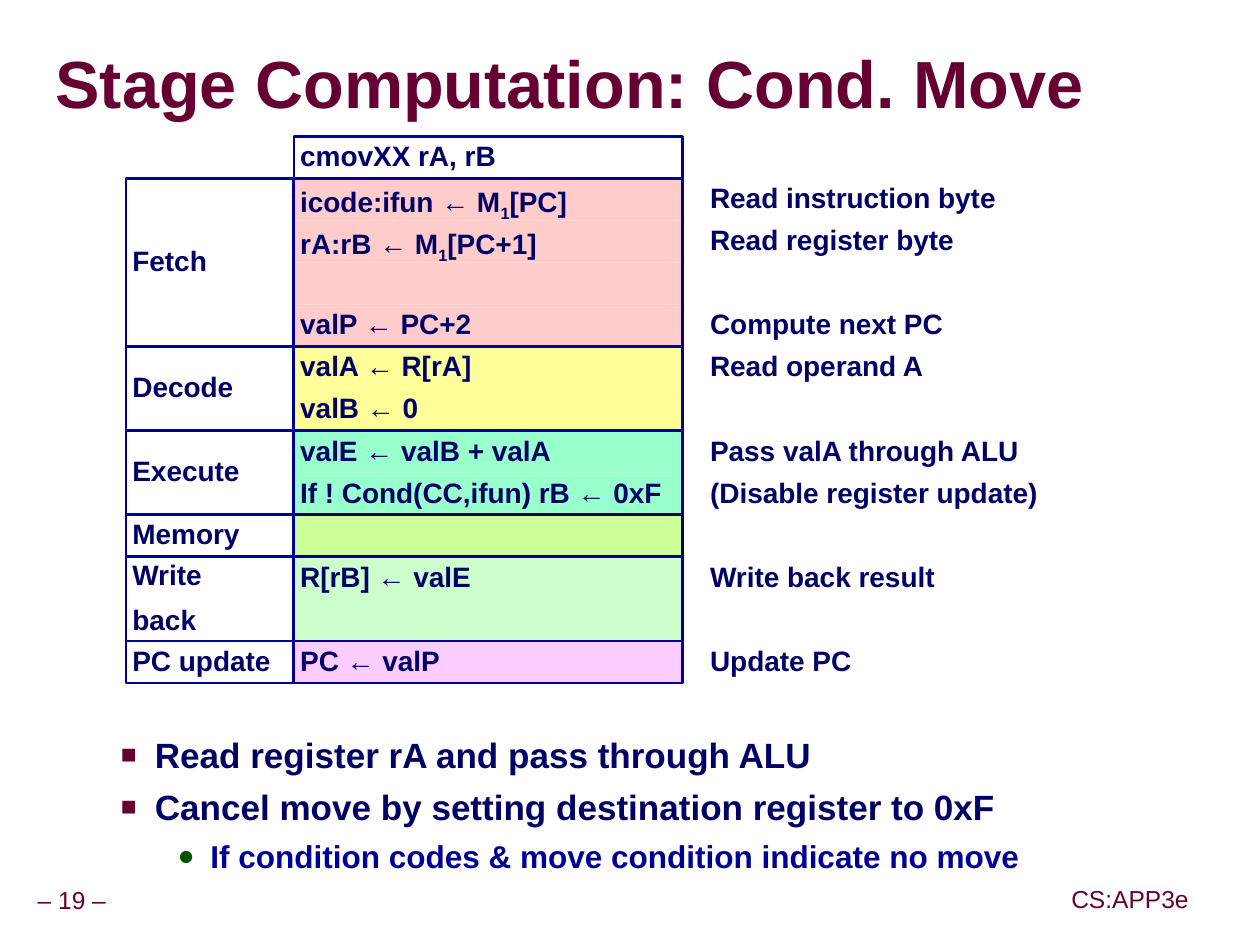
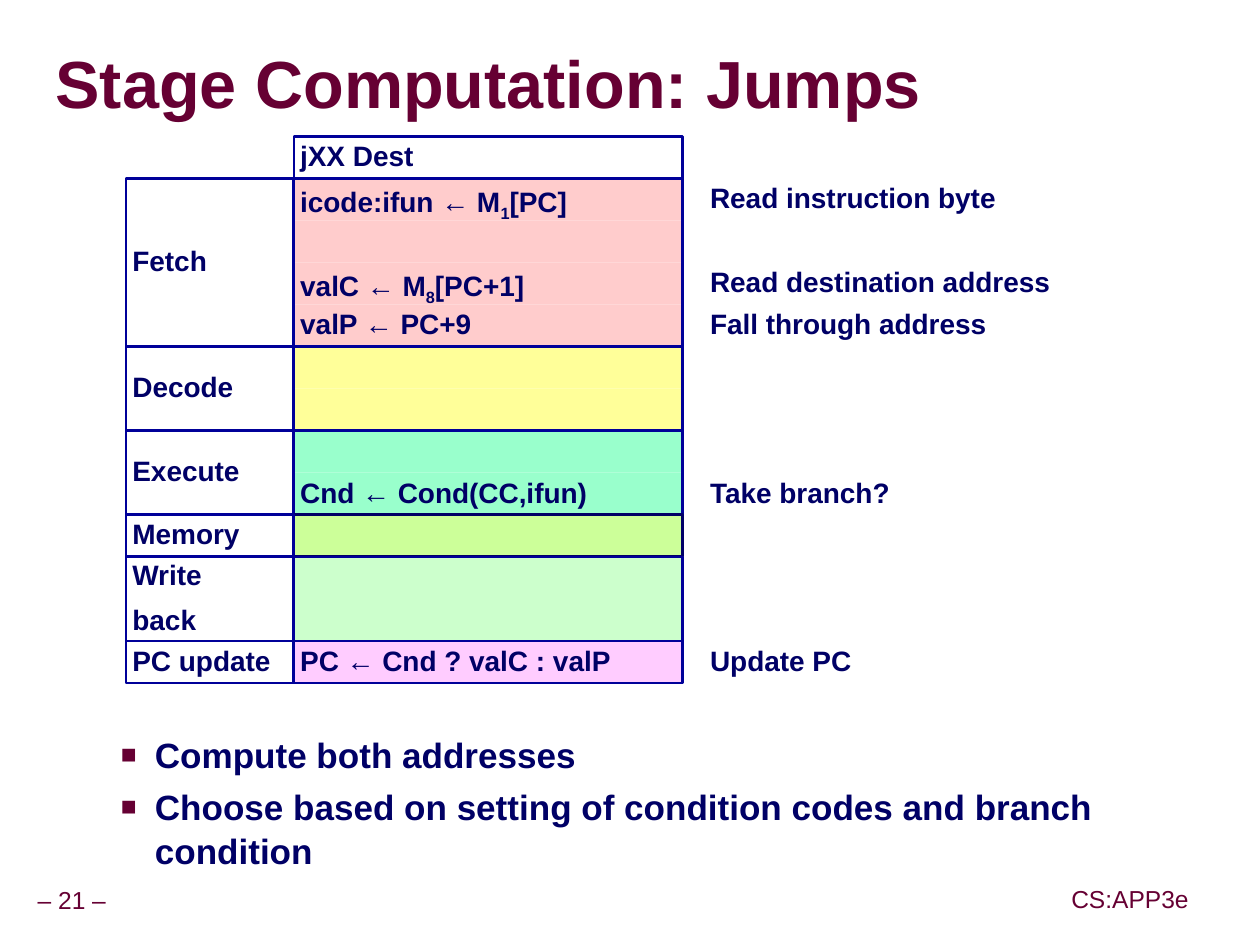
from lxml import etree
from pptx import Presentation
from pptx.dml.color import RGBColor
from pptx.enum.shapes import MSO_SHAPE
from pptx.enum.text import MSO_ANCHOR, PP_ALIGN
from pptx.oxml.ns import qn
from pptx.util import Inches, Pt

RECT = MSO_SHAPE.RECTANGLE
TOP, MIDDLE = MSO_ANCHOR.TOP, MSO_ANCHOR.MIDDLE
CENTER = PP_ALIGN.CENTER

FONT = "Arial"
COLORS = {
    "maroon": "660033", "navy": "000066", "blue": "000099", "green": "005400",
    "shadow": "999999",
    "fetch": "FFCCCC", "decode": "FFFF99", "execute": "99FFCC",
    "memory": "CCFF99", "write": "CCFFCC", "pc": "FFCCFF",
}

ROW_H = 1 / 3
LABEL_W, FORMULA_W, NOTE_GAP = 1.33, 3.08, 0.17

# label lines, fill, number of rows, outline
STAGES = [
    (["Fetch"], "fetch", 4, "blue"),
    (["Decode"], "decode", 2, "blue"),
    (["Execute"], "execute", 2, "blue"),
    (["Memory"], "memory", 1, "navy"),
    (["Write", "back"], "write", 2, "blue"),
    (["PC update"], "pc", 1, "blue"),
]

# level: left margin, hanging indent, size, text colour, bullet, bullet colour,
# bullet percent, line spacing, space before
BULLETS = {
    1: (0.81, 0.27, 20, "navy", "■", "maroon", 75, 1.04, 5),
    2: (1.25, 0.26, 18, "blue", "●", "green", 90, 1.07, 3.5),
}

# rows: (formula, explanation), where "_" lowers the next character
SLIDES = [
    {
        "number": 19,
        "title": "Stage Computation: Cond. Move",
        "instruction": "cmovXX rA, rB",
        "rows": [
            ("icode:ifun ← M_1[PC]", "Read instruction byte"),
            ("rA:rB ← M_1[PC+1]", "Read register byte"),
            ("", ""),
            ("valP ← PC+2", "Compute next PC"),
            ("valA ← R[rA]", "Read operand A"),
            ("valB ← 0", ""),
            ("valE ← valB + valA", "Pass valA through ALU"),
            ("If ! Cond(CC,ifun) rB ← 0xF", "(Disable register update)"),
            ("", ""),
            ("R[rB] ← valE", "Write back result"),
            ("", ""),
            ("PC ← valP", "Update PC"),
        ],
        "points": [
            (1, "Read register rA and pass through ALU"),
            (1, "Cancel move by setting destination register to 0xF"),
            (2, "If condition codes & move condition indicate no move"),
        ],
    },
    {
        "number": 21,
        "title": "Stage Computation: Jumps",
        "instruction": "jXX Dest",
        "rows": [
            ("icode:ifun ← M_1[PC]", "Read instruction byte"),
            ("", ""),
            ("valC ← M_8[PC+1]", "Read destination address"),
            ("valP ← PC+9", "Fall through address"),
            ("", ""),
            ("", ""),
            ("", ""),
            ("Cnd ← Cond(CC,ifun)", "Take branch?"),
            ("", ""),
            ("", ""),
            ("", ""),
            ("PC ← Cnd ? valC : valP", "Update PC"),
        ],
        "points": [
            (1, "Compute both addresses"),
            (1, "Choose based on setting of condition codes and branch condition"),
        ],
    },
]


def rgb(name):
    return RGBColor.from_string(COLORS[name])


def add_color(parent, name):
    etree.SubElement(parent, qn("a:srgbClr"), val=COLORS[name])


def style_paragraph(paragraph, size, color, bold=True, spacing=0.9):
    paragraph.line_spacing = spacing
    font = paragraph.font
    font.name, font.size, font.bold = FONT, Pt(size), bold
    font.color.rgb = rgb(color)


def prepare_frame(shape, anchor=TOP, inset_x=0.05, inset_y=0.05, wrap=True):
    frame = shape.text_frame
    frame.word_wrap, frame.vertical_anchor = wrap, anchor
    frame.margin_left = frame.margin_right = Inches(inset_x)
    frame.margin_top = frame.margin_bottom = Inches(inset_y)
    return frame


def add_text_area(shapes, box):
    return shapes.add_textbox(*map(Inches, box))


def add_cell(shapes, box, fill=None, line=None):
    cell = shapes.add_shape(RECT, *map(Inches, box))
    cell.shadow.inherit = False
    if fill:
        cell.fill.solid()
        cell.fill.fore_color.rgb = rgb(fill)
    else:
        cell.fill.background()
    if line:
        cell.line.color.rgb = rgb(line)
        cell.line.width = Pt(1.5)
    else:
        cell.line.fill.background()
    return cell


def write_cell(shape, lines, anchor=TOP):
    """Write one paragraph per line, lowering each character after "_"."""
    frame = prepare_frame(shape, anchor)
    for i, line in enumerate(lines):
        paragraph = frame.add_paragraph() if i else frame.paragraphs[0]
        paragraph.alignment = PP_ALIGN.LEFT
        if i:
            paragraph.space_before = Pt(8)
        style_paragraph(paragraph, 16, "navy")
        before, _, lowered = line.partition("_")
        paragraph.add_run().text = before
        if lowered:
            subscript = paragraph.add_run()
            subscript.text = lowered[0]
            subscript.font._element.set("baseline", "-25000")
            paragraph.add_run().text = lowered[1:]


def add_title(slide, box, text):
    frame = prepare_frame(add_text_area(slide.shapes, box), MIDDLE, 0, 0)
    paragraph = frame.paragraphs[0]
    style_paragraph(paragraph, 38, "maroon", spacing=0.87)
    run = paragraph.add_run()
    run.text = text
    effects = etree.SubElement(run.font._element, qn("a:effectLst"))
    shadow = etree.SubElement(effects, qn("a:outerShdw"),
                              dist="38100", dir="2700000", algn="tl")
    add_color(shadow, "shadow")


def add_footer(slide, box, text):
    frame = prepare_frame(add_text_area(slide.shapes, box), MIDDLE, wrap=False)
    paragraph = frame.paragraphs[0]
    paragraph.text = text
    paragraph.alignment = CENTER
    style_paragraph(paragraph, 14, "maroon", bold=False)


def add_points(slide, box, points):
    frame = prepare_frame(add_text_area(slide.shapes, box), inset_x=0.1)
    for i, (level, text) in enumerate(points):
        (margin, hanging, size, color, mark, mark_color, percent,
         spacing, before) = BULLETS[level]
        paragraph = frame.add_paragraph() if i else frame.paragraphs[0]
        paragraph.text = text
        paragraph.level = level
        if i:
            paragraph.space_before = Pt(before)
        paragraph.line_spacing = spacing
        props = paragraph._p.get_or_add_pPr()
        props.set("marL", str(Inches(margin)))
        props.set("indent", str(-Inches(hanging)))
        add_color(etree.SubElement(props, qn("a:buClr")), mark_color)
        etree.SubElement(props, qn("a:buSzPct"), val=str(percent * 1000))
        etree.SubElement(props, qn("a:buFont"), typeface=FONT)
        etree.SubElement(props, qn("a:buChar"), char=mark)
        style_paragraph(paragraph, size, color, spacing=spacing)


def add_stage(slide, left, top, stage, rows):
    """Group a stage's label, its formula rows and their explanations."""
    label, fill, count, outline = stage
    shapes = slide.shapes.add_group_shape().shapes
    formula_left = left + LABEL_W
    note_left = formula_left + FORMULA_W + NOTE_GAP
    height = count * ROW_H
    for i, (formula, note) in enumerate(rows):
        y = top + i * ROW_H
        cell = add_cell(shapes, (formula_left, y, FORMULA_W, ROW_H), fill,
                        outline if count == 1 else None)
        if formula:
            write_cell(cell, [formula])
        if note:
            note_area = add_text_area(shapes, (note_left, y, FORMULA_W, ROW_H))
            write_cell(note_area, [note])
    if count > 1:
        add_cell(shapes, (formula_left, top, FORMULA_W, height), line=outline)
    label_cell = add_cell(shapes, (left, top, LABEL_W, height), line="blue")
    write_cell(label_cell, label, MIDDLE)


def add_stages(slide, left, top, instruction, rows):
    header = add_cell(slide.shapes, (left + LABEL_W, top, FORMULA_W, ROW_H),
                      line="blue")
    write_cell(header, [instruction])
    first = 0
    for stage in STAGES:
        last = first + stage[2]
        add_stage(slide, left, top + (first + 1) * ROW_H, stage, rows[first:last])
        first = last


def add_computation_slide(deck, content):
    slide = deck.slides.add_slide(deck.slide_layouts[6])
    add_footer(slide, (0.24, 6.99, 0.66, 0.31), f"– {content['number']} –")
    add_footer(slide, (8.44, 6.98, 1.04, 0.32), "CS:APP3e")
    add_title(slide, (0.44, 0.27, 9.52, 0.85), content["title"])
    add_points(slide, (0.32, 5.75, 9.07, 1.28), content["points"])
    add_stages(slide, 1, 1.08, content["instruction"], content["rows"])


def main():
    deck = Presentation()
    deck.slide_width, deck.slide_height = Inches(9.99), Inches(7.49)
    for content in SLIDES:
        add_computation_slide(deck, content)
    deck.save("out.pptx")


if __name__ == "__main__":
    main()
